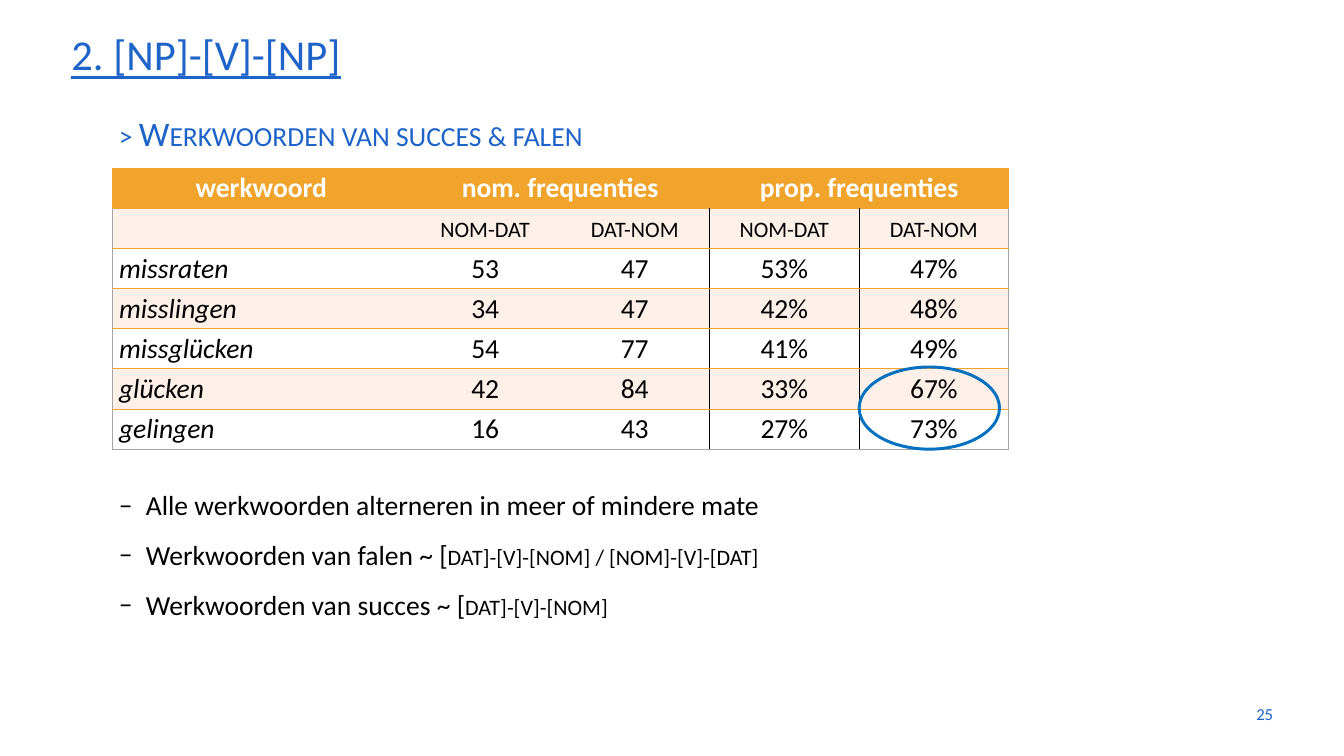
from dataclasses import dataclass

from lxml.etree import SubElement
from pptx import Presentation
from pptx.dml.color import RGBColor
from pptx.enum.shapes import MSO_SHAPE
from pptx.enum.text import MSO_ANCHOR, PP_ALIGN
from pptx.oxml.ns import qn
from pptx.util import Inches, Pt


@dataclass(frozen=True)
class Theme:
    font: str = "Calibri"
    blue: str = "1E64C8"
    ring: str = "0070C0"
    orange: str = "F1A42B"
    cream: str = "FCF0E8"
    white: str = "FFFFFF"
    black: str = "000000"
    grey: str = "A5A5A5"
    title: int = 54
    subtitle: int = 35
    body: int = 28
    page: int = 17


def rgb(value):
    return RGBColor.from_string(value)


class SlideBuilder:
    def __init__(self, slide, theme):
        self.slide = slide
        self.theme = theme

    def run(self, paragraph, text, size, color, bold=False, italic=False,
            underline=False, small_caps=False):
        run = paragraph.add_run()
        run.text = text
        font = run.font
        font.name, font.size = self.theme.font, Pt(size)
        font.color.rgb = rgb(color)
        font.bold, font.italic, font.underline = bold, italic, underline
        if small_caps:
            run._r.get_or_add_rPr().set("cap", "small")

    def text_box(self, left, top, width, height, anchor=MSO_ANCHOR.TOP):
        box = self.slide.shapes.add_textbox(
            Inches(left), Inches(top), Inches(width), Inches(height))
        frame = box.text_frame
        frame.word_wrap = True
        frame.vertical_anchor = anchor
        return frame

    def line(self, box, text, size, spacing=1.0, align=PP_ALIGN.LEFT, **style):
        frame = self.text_box(*box, anchor=style.pop("anchor", MSO_ANCHOR.TOP))
        paragraph = frame.paragraphs[0]
        paragraph.alignment = align
        paragraph.line_spacing = spacing
        self.run(paragraph, text, size, self.theme.blue, **style)

    def dash_list(self, box, items, spacing):
        frame = self.text_box(*box)
        for index, (plain, caps) in enumerate(items):
            paragraph = frame.add_paragraph() if index else frame.paragraphs[0]
            properties = paragraph._p.get_or_add_pPr()
            properties.set("marL", str(Inches(0.38)))
            properties.set("indent", str(-Inches(0.38)))
            SubElement(properties, qn("a:buFont"), typeface=self.theme.font)
            SubElement(properties, qn("a:buChar"), char="–")
            paragraph.line_spacing = spacing
            self.run(paragraph, plain, self.theme.body, self.theme.black)
            if caps:
                self.run(paragraph, caps, self.theme.body, self.theme.black,
                         small_caps=True)

    def table(self, left, top, widths, height, row_count):
        frame = self.slide.shapes.add_table(
            row_count, len(widths), Inches(left), Inches(top),
            Inches(sum(widths)), Inches(height))
        table = frame.table
        table.horz_banding = False
        for column, width in zip(table.columns, widths):
            column.width = Inches(width)
        for row in table.rows:
            row.height = Inches(height / row_count)
        return table

    def cell(self, cell, text, fill, borders, align=PP_ALIGN.CENTER, **style):
        properties = cell._tc.get_or_add_tcPr()
        for side in "LRTB":
            color = borders.get(side)
            edge = SubElement(properties, qn(f"a:ln{side}"), w=str(Pt(1)))
            if color:
                solid = SubElement(edge, qn("a:solidFill"))
                SubElement(solid, qn("a:srgbClr"), val=color)
            else:
                SubElement(edge, qn("a:noFill"))
        cell.fill.solid()
        cell.fill.fore_color.rgb = rgb(fill)
        if text:
            paragraph = cell.text_frame.paragraphs[0]
            paragraph.alignment = align
            color = style.pop("color", self.theme.black)
            self.run(paragraph, text, self.theme.body, color, **style)

    def ellipse(self, left, top, width, height):
        ring = self.slide.shapes.add_shape(
            MSO_SHAPE.OVAL, Inches(left), Inches(top),
            Inches(width), Inches(height))
        ring.shadow.inherit = False
        ring.fill.background()
        ring.line.color.rgb = rgb(self.theme.ring)
        ring.line.width = Pt(3)


HEADINGS = ["werkwoord", "nom. frequenties", "", "prop. frequenties", ""]
ORDERS = ["", "nom-dat", "dat-nom", "nom-dat", "dat-nom"]
VERBS = [
    ["missraten", "53", "47", "53%", "47%"],
    ["misslingen", "34", "47", "42%", "48%"],
    ["missglücken", "54", "77", "41%", "49%"],
    ["glücken", "42", "84", "33%", "67%"],
    ["gelingen", "16", "43", "27%", "73%"],
]
FINDINGS = [
    ("Alle werkwoorden alterneren in meer of mindere mate", ""),
    ("Werkwoorden van falen ~ [", "dat]-[v]-[nom] / [nom]-[v]-[dat]"),
    ("Werkwoorden van succes ~ [", "dat]-[v]-[nom]"),
]


def fill_frequencies(builder):
    theme = builder.theme
    rows = [HEADINGS, ORDERS] + VERBS
    last_row, last_column = len(rows) - 1, len(HEADINGS) - 1
    table = builder.table(1.58, 2.37, [4.21] + [2.11] * 4, 3.97, len(rows))
    for first in (1, 3):
        table.cell(0, first).merge(table.cell(0, first + 1))

    for r, row in enumerate(rows):
        for c, text in enumerate(row):
            # Orange rules between rows, grey frame, black column dividers
            borders = {"T": theme.orange,
                       "B": theme.grey if r == last_row else theme.orange}
            frame = theme.grey if r else theme.orange
            divider = theme.black if r else None
            if c == 0:
                borders["L"] = frame
            if c == last_column:
                borders["R"] = frame
            if c in (3, 4):
                borders["L"] = divider
            if c in (2, 3):
                borders["R"] = divider

            # Header, order labels, then verbs on alternating bands
            fill = theme.cream if r % 2 else theme.white
            style = {}
            if r == 0:
                fill = theme.orange
                style = {"color": theme.white, "bold": True}
            elif r == 1:
                style = {"small_caps": True}
            elif c == 0:
                style = {"italic": True, "align": PP_ALIGN.LEFT}
            builder.cell(table.cell(r, c), text, fill, borders, **style)


def main():
    presentation = Presentation()
    presentation.slide_width = Inches(18.96)
    presentation.slide_height = Inches(10.67)
    slide = presentation.slides.add_slide(presentation.slide_layouts[6])
    theme = Theme()
    builder = SlideBuilder(slide, theme)

    # Title, page number and subtitle
    builder.line((0.91, 0.28, 17.18, 0.94), "2. [np]-[v]-[np]", theme.title,
                 spacing=0.9, anchor=MSO_ANCHOR.MIDDLE,
                 underline=True, small_caps=True)
    builder.line((17.05, 9.79, 1.01, 0.57), "25", theme.page,
                 align=PP_ALIGN.RIGHT, anchor=MSO_ANCHOR.MIDDLE)
    builder.line((1.58, 1.42, 9.28, 0.75), "> Werkwoorden van succes & falen",
                 theme.subtitle, spacing=1.2, small_caps=True)

    # Findings below the table
    builder.dash_list((1.58, 6.61, 13.21, 2.14), FINDINGS, spacing=1.5)

    # Frequency table with the highest shares ringed
    fill_frequencies(builder)
    builder.ellipse(12.12, 5.18, 1.98, 1.16)

    presentation.save("out.pptx")


if __name__ == "__main__":
    main()
